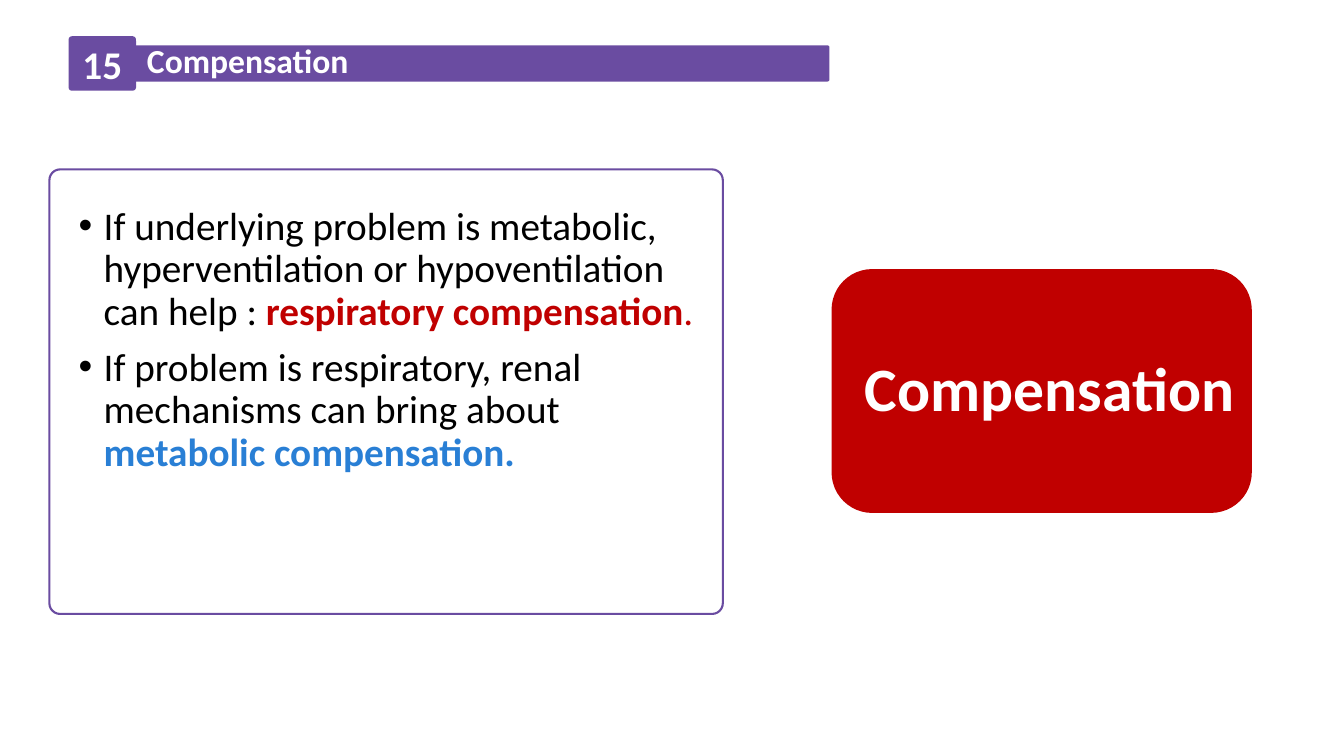
import pptx
import pptx.util
import pptx.dml.color
import pptx.enum.shapes
import pptx.enum.text
from lxml import etree

Pt = pptx.util.Pt
ANCHOR = pptx.enum.text.MSO_ANCHOR
ALIGN = pptx.enum.text.PP_ALIGN
FONT = "Calibri"
COLOURS = {
    "white": "FFFFFF",
    "black": "000000",
    "purple": "6A4CA1",
    "red": "C00000",
    "blue": "297FD5",
}
BULLETS = [
    [("If underlying problem is metabolic, hyperventilation or hypoventilation can help : ", "black", False),
     ("respiratory compensation", "red", True),
     (".", "red", False)],
    [("If problem is respiratory, renal mechanisms can bring about ", "black", False),
     ("metabolic compensation.", "blue", True)],
]


def colour(name):
    return pptx.dml.color.RGBColor.from_string(COLOURS[name])


def add_panel(page, left, top, width, height, fill, corner, line=None):
    """Add a rounded rectangle, outlined only when a line colour is given."""
    panel = page.shapes.add_shape(
        pptx.enum.shapes.MSO_SHAPE.ROUNDED_RECTANGLE,
        Pt(left), Pt(top), Pt(width), Pt(height))
    panel.adjustments[0] = corner
    panel.shadow.inherit = False
    panel.fill.solid()
    panel.fill.fore_color.rgb = colour(fill)
    if line:
        panel.line.color.rgb = colour(line)
        panel.line.width = Pt(1.5)
    else:
        panel.line.fill.background()
    return panel


def add_text_box(page, left, top, width, height):
    box = page.shapes.add_textbox(Pt(left), Pt(top), Pt(width), Pt(height))
    box.text_frame.word_wrap = True
    return box


def add_span(para, text, size, name="white", bold=True):
    span = para.add_run()
    span.text = text
    span.font.name = FONT
    span.font.size = Pt(size)
    span.font.bold = bold
    span.font.color.rgb = colour(name)


def set_bullet(para):
    """Give a paragraph a hanging round bullet."""
    settings = para._p.get_or_add_pPr()
    settings.set("marL", str(Pt(18)))
    settings.set("indent", str(-Pt(18)))
    namespace = "http://schemas.openxmlformats.org/drawingml/2006/main"
    etree.SubElement(settings, f"{{{namespace}}}buFont", typeface="Arial")
    etree.SubElement(settings, f"{{{namespace}}}buChar", char="•")


def add_bullets(page, left, top, width, height):
    frame = add_text_box(page, left, top, width, height).text_frame
    for index, spans in enumerate(BULLETS):
        para = frame.add_paragraph() if index else frame.paragraphs[0]
        set_bullet(para)
        para.line_spacing = 0.9
        para.space_before = Pt(10 if index else 0)
        for text, name, bold in spans:
            add_span(para, text, 28, name, bold)


def add_header(page):
    add_panel(page, 78.5, 32.4, 514, 25.9, "purple", 0.06)
    badge = add_panel(page, 49, 25.9, 48.2, 38.9, "purple", 0.06)
    frame = badge.text_frame
    frame.vertical_anchor = ANCHOR.MIDDLE
    frame.word_wrap = False
    para = frame.paragraphs[0]
    para.alignment = ALIGN.CENTER
    add_span(para, "15", 28)

    label = add_text_box(page, 97.9, 38.2, 430, 25.2)
    para = label.text_frame.paragraphs[0]
    para.line_spacing = Pt(15.2)
    para.space_after = Pt(5)
    add_span(para, "Compensation", 24)


def place_title(page, left, top, width, height):
    title = page.shapes.title
    title.left, title.top = Pt(left), Pt(top)
    title.width, title.height = Pt(width), Pt(height)
    frame = title.text_frame
    frame.word_wrap = True
    frame.auto_size = pptx.enum.text.MSO_AUTO_SIZE.NONE
    frame.vertical_anchor = ANCHOR.MIDDLE
    para = frame.paragraphs[0]
    para.alignment = ALIGN.LEFT
    para.line_spacing = 0.9
    add_span(para, "Compensation", 44)
    # Bring the title in front of its card
    page.shapes.element.append(title.element)


def main():
    deck = pptx.Presentation()
    deck.slide_width, deck.slide_height = Pt(960), Pt(540)
    page = deck.slides.add_slide(deck.slide_layouts[5])

    # Explanation on the left
    add_panel(page, 35.3, 121, 481, 317.5, "white", 0.024, "purple")
    add_bullets(page, 49, 144, 458, 272)

    # Numbered header bar
    add_header(page)

    # Title card on the right
    add_panel(page, 594, 192.2, 300.2, 174.2, "red", 0.1667)
    place_title(page, 610.6, 227.5, 283.7, 104.4)

    deck.save("out.pptx")


if __name__ == "__main__":
    main()
